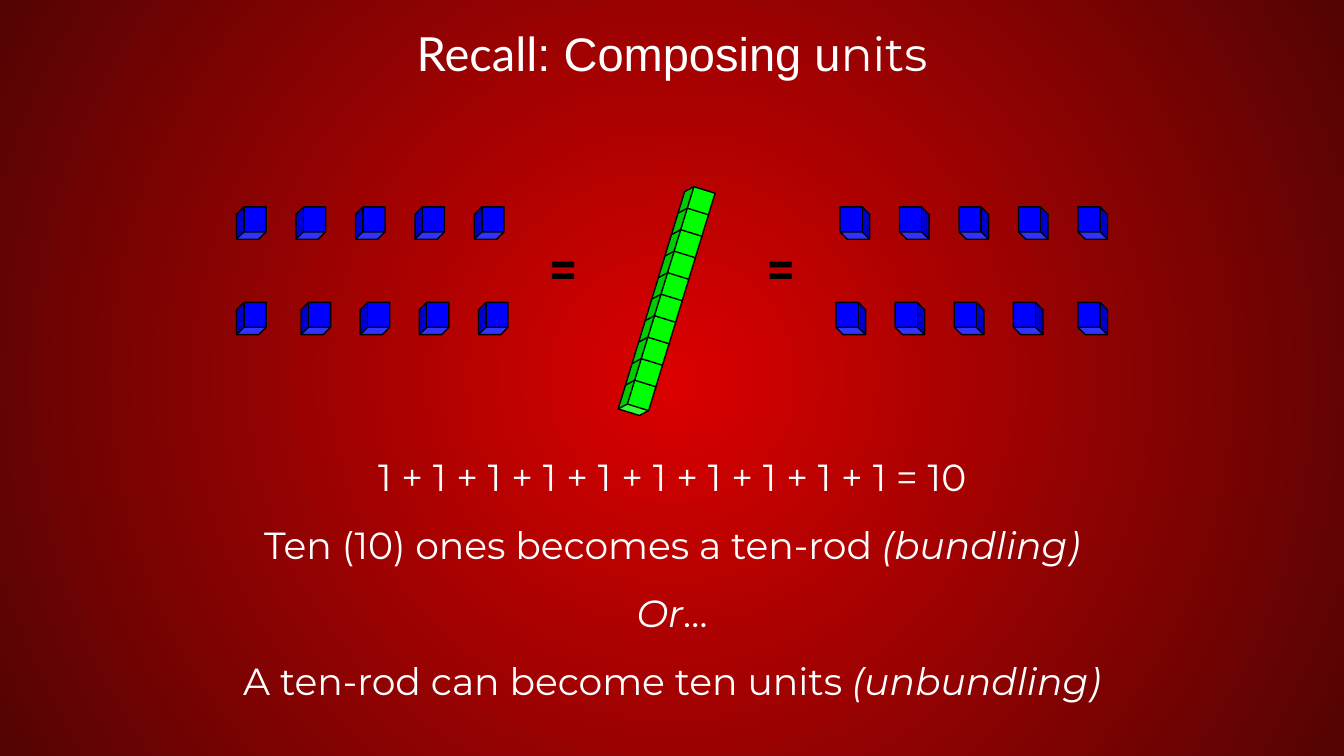
from lxml.etree import SubElement
from pptx import Presentation
from pptx.dml.color import RGBColor
from pptx.enum.shapes import MSO_SHAPE as Shape
from pptx.enum.text import MSO_ANCHOR as Anchor, PP_ALIGN as Align
from pptx.oxml.ns import qn
from pptx.util import Inches, Pt

COLORS = {
    "center": "DB0000",
    "edge": "540303",
    "text": "FFFFFF",
    "black": "000000",
    "rod": "00FF00",
    "unit": "0000FF",
}
BODY_FONT = "Montserrat"
SLIDE_WIDTH = 10
SLIDE_HEIGHT = SLIDE_WIDTH * 9 / 16
CUBE_WIDTH, CUBE_HEIGHT = 0.22, 0.24
UPPER_ROW, LOWER_ROW = 1.54, 2.25

TITLE = [[("Recall", "Lato", False), (": Composing u", "Arial", False),
          ("nits", BODY_FONT, False)]]
EXPLANATION = [
    [("1 + 1 + 1 + 1 + 1 + 1 + 1 + 1 + 1 + 1 = 10", BODY_FONT, False)],
    [("Ten (10) ones becomes a ten-rod ", BODY_FONT, False),
     ("(bundling)", BODY_FONT, True)],
    [("Or", BODY_FONT, True), ("…", BODY_FONT, False)],
    [("A ten-rod can become ten units ", BODY_FONT, False),
     ("(unbundling)", BODY_FONT, True)],
]


def color(name):
    return RGBColor.from_string(COLORS[name])


def spread(first, last, count):
    """Return evenly spaced positions from first to last."""
    step = (last - first) / (count - 1)
    return [first + step * index for index in range(count)]


def paint_background(page):
    """Fill the page with a gradient that spreads in circles from its middle."""
    fill = page.background.fill
    fill.gradient()
    for stop, name in zip(fill.gradient_stops, ("center", "edge")):
        stop.color.rgb = color(name)
    gradient = page.element.find(".//" + qn("a:gradFill"))
    gradient.remove(gradient.find(qn("a:lin")))
    circle = SubElement(gradient, qn("a:path"), path="circle")
    SubElement(circle, qn("a:fillToRect"),
               {side: "50000" for side in "ltrb"})


def add_text(shapes, area, lines, size, ink="text", bold=False, spacing=1):
    """Write centred lines, each a list of (text, font, italic) runs."""
    box = shapes.add_textbox(*map(Inches, area))
    frame = box.text_frame
    frame.word_wrap = True
    frame.vertical_anchor = Anchor.TOP
    frame.margin_left = frame.margin_right = Inches(0.1)
    frame.margin_top = frame.margin_bottom = Inches(0.1)
    for index, line in enumerate(lines):
        para = frame.add_paragraph() if index else frame.paragraphs[0]
        para.alignment = Align.CENTER
        para.line_spacing = spacing
        for text, font, italic in line:
            span = para.add_run()
            span.text = text
            span.font.name = font
            span.font.size = Pt(size)
            span.font.bold = bold
            span.font.italic = italic
            span.font.color.rgb = color(ink)
    return box


def add_equals(shapes, left):
    box = add_text(shapes, (left, 1.72, 0.54, 0.62),
                   [[("=", BODY_FONT, False)]], 25, "black", bold=True)
    box.rotation = 180


def add_cube(group, left, top, fill, rotation=180, mirrored=False):
    cube = group.shapes.add_shape(Shape.CUBE, Inches(left), Inches(top),
                                  Inches(CUBE_WIDTH), Inches(CUBE_HEIGHT))
    cube.adjustments[0] = 0.25
    cube.rotation = rotation
    cube.shadow.inherit = False
    cube.fill.solid()
    cube.fill.fore_color.rgb = color(fill)
    cube.line.color.rgb = color("black")
    cube.line.width = Pt(0.75)
    if mirrored:
        cube.element.spPr.find(qn("a:xfrm")).set("flipH", "1")


def add_ten_rod(page):
    group = page.shapes.add_group_shape()
    for left, top in zip(spread(5.07, 4.63, 10), spread(1.4, 2.84, 10)):
        add_cube(group, left, top, "rod", rotation=197.1)


def add_ten_units(page, mirrored=False):
    """Draw two rows of five cubes, on the left or mirrored to the right."""
    upper = spread(1.76, 3.53, 5)
    lower = [1.76] + spread(2.24, 3.56, 4)
    group = page.shapes.add_group_shape()
    for top, row in ((UPPER_ROW, upper), (LOWER_ROW, lower)):
        for left in row:
            if mirrored:
                left = SLIDE_WIDTH - CUBE_WIDTH - left
            add_cube(group, left, top, "unit", mirrored=mirrored)
    return group


def main():
    deck = Presentation()
    deck.slide_width = Inches(SLIDE_WIDTH)
    deck.slide_height = Inches(SLIDE_HEIGHT)
    page = deck.slides.add_slide(deck.slide_layouts[6])

    paint_background(page)
    add_text(page.shapes, (0.34, 0.08, 9.32, 0.63), TITLE, 25.2)
    add_ten_rod(page)
    add_ten_units(page)
    add_equals(page.shapes, 3.92)
    add_text(page.shapes, (0.34, 3.11, 9.32, 2.06), EXPLANATION, 20.2,
             spacing=1.5)
    right_units = add_ten_units(page, mirrored=True)
    add_equals(right_units.shapes, 5.54)

    deck.save("out.pptx")


if __name__ == "__main__":
    main()
